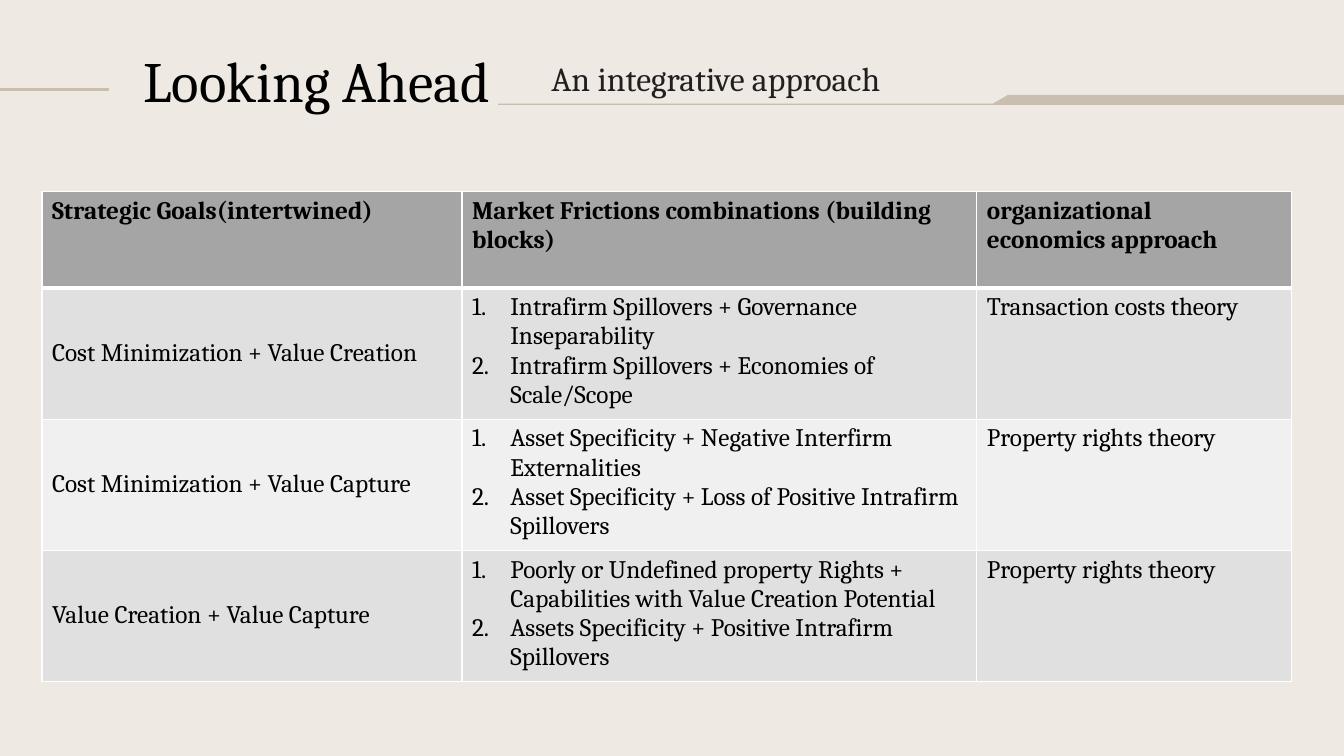
from lxml import etree
from pptx import Presentation
from pptx.dml.color import RGBColor
from pptx.enum.shapes import MSO_CONNECTOR
from pptx.enum.text import MSO_ANCHOR, PP_ALIGN
from pptx.oxml import parse_xml
from pptx.oxml.ns import nsdecls, qn
from pptx.util import Inches, Pt

LINE = MSO_CONNECTOR.STRAIGHT
TOP, MID = MSO_ANCHOR.TOP, MSO_ANCHOR.MIDDLE
LEFT, CENTER = PP_ALIGN.LEFT, PP_ALIGN.CENTER
WIDE, HIGH = Inches(13.33), Inches(7.5)
COLS, ROWS = 32, 18


def tint(code):
    return RGBColor.from_string(code)


class Deck:
    font, ink, sand = "Cambria", "000000", "C9BEAF"

    def __init__(self):
        self.prs = Presentation()
        self.prs.slide_width, self.prs.slide_height = WIDE, HIGH
        self.slide = self.prs.slides.add_slide(self.prs.slide_layouts[6])
        fill = self.slide.background.fill
        fill.solid()
        fill.fore_color.rgb = tint("EEE9E3")

    def x(self, col):
        return round(WIDE * col / COLS)

    def y(self, row):
        return round(HIGH * row / ROWS)

    def words(self, para, text, size, color=ink, bold=False):
        for i, part in enumerate(text.split("\n")):
            if i:
                para.add_line_break()
            run = para.add_run()
            run.text = part
            font = run.font
            font.name, font.size, font.bold = self.font, Pt(size), bold
            font.color.rgb = tint(color)

    def text(self, col, row, wide, high, text, size, color=ink, align=LEFT, space=1.0):
        box = self.slide.shapes.add_textbox(self.x(col), self.y(row), self.x(wide), self.y(high))
        box.text_frame.word_wrap = True
        para = box.text_frame.paragraphs[0]
        para.alignment, para.line_spacing = align, space
        self.words(para, text, size, color)

    def rule(self, start, end, row):
        line = self.slide.shapes.add_connector(
            LINE, self.x(start), self.y(row), self.x(end), self.y(row))
        line.line.color.rgb = tint(self.sand)
        line.line.width = Pt(1.5)
        etree.SubElement(line._element.spPr, qn("a:effectLst"))

    def shape(self, spots):
        spots = [(self.x(col), self.y(row)) for col, row in spots]
        pen = self.slide.shapes.build_freeform(*spots[0])
        pen.add_line_segments(spots[1:], close=True)
        form = pen.convert_to_shape()
        form.shadow.inherit = False
        form.fill.solid()
        form.fill.fore_color.rgb = tint(self.sand)
        form.line.fill.background()

    def number(self, para):
        props = para._p.get_or_add_pPr()
        props.set("marL", str(Inches(0.38)))
        props.set("indent", str(-Inches(0.38)))
        color = etree.SubElement(props, qn("a:buClr"))
        etree.SubElement(color, qn("a:srgbClr")).set("val", self.ink)
        etree.SubElement(props, qn("a:buFont")).set("typeface", self.font)
        etree.SubElement(props, qn("a:buAutoNum")).set("type", "arabicPeriod")

    def edge(self, cell, top, low):
        props = cell._tc.get_or_add_tcPr()
        for i, (side, width) in enumerate(zip("LRTB", (1, 1, top, low))):
            props.insert(i, parse_xml(
                f'<a:ln{side} {nsdecls("a")} w="{Pt(width)}"><a:solidFill>'
                f'<a:srgbClr val="FFFFFF"/></a:solidFill></a:ln{side}>'))

    def cell(self, cell, lines, fill, bold=False, anchor=TOP):
        cell.fill.solid()
        cell.fill.fore_color.rgb = tint(fill)
        cell.vertical_anchor = anchor
        frame = cell.text_frame
        for i, text in enumerate(lines):
            para = frame.add_paragraph() if i else frame.paragraphs[0]
            if len(lines) > 1:
                self.number(para)
            self.words(para, text, 18, bold=bold)

    def table(self, col, row, widths, heights, data):
        grid = self.slide.shapes.add_table(
            len(heights), len(widths), self.x(col), self.y(row),
            self.x(sum(widths)), self.y(sum(heights))).table
        grid.horz_banding = False
        for item, wide in zip(grid.columns, widths):
            item.width = self.x(wide)
        for item, high in zip(grid.rows, heights):
            item.height = self.y(high)
        for r, cells in enumerate(data):
            head = r == 0
            fill = "A5A5A5" if head else ("F0F0F0", "E0E0E0")[r % 2]
            for c, lines in enumerate(cells):
                spot = grid.cell(r, c)
                self.cell(spot, lines, fill, head, MID if c == 0 and not head else TOP)
                self.edge(spot, 3 if r == 1 else 1, 3 if head else 1)


def main():
    deck = Deck()

    # Title band
    deck.rule(0, 2.6, 2.13)
    deck.shape([(32, 2.26), (24, 2.26), (23.64, 2.47), (11.86, 2.47), (11.86, 2.5), (32, 2.5)])
    deck.text(2.6, 1.27, 9.88, 1.68, "Looking Ahead", 40.7, align=CENTER, space=0.8)
    deck.text(12.89, 1.27, 16, 1.94, "An integrative approach", 24, "231F20")

    # Table of goals, frictions and theories
    data = [
        (["Strategic Goals(intertwined)"],
         ["Market Frictions combinations (building blocks)"],
         ["organizational\neconomics approach"]),
        (["Cost Minimization + Value Creation"],
         ["Intrafirm Spillovers + Governance Inseparability",
          "Intrafirm Spillovers + Economies of Scale/Scope"],
         ["Transaction costs theory"]),
        (["Cost Minimization + Value Capture"],
         ["Asset Specificity + Negative Interfirm Externalities",
          "Asset Specificity + Loss of Positive Intrafirm Spillovers"],
         ["Property rights theory"]),
        (["Value Creation + Value Capture"],
         ["Poorly or Undefined property Rights + Capabilities with Value Creation Potential",
          "Assets Specificity + Positive Intrafirm Spillovers"],
         ["Property rights theory"]),
    ]
    deck.table(1, 4.56, [10, 12.26, 7.49], [2.3] + [3.01] * 3, data)

    deck.prs.save("out.pptx")


if __name__ == "__main__":
    main()
